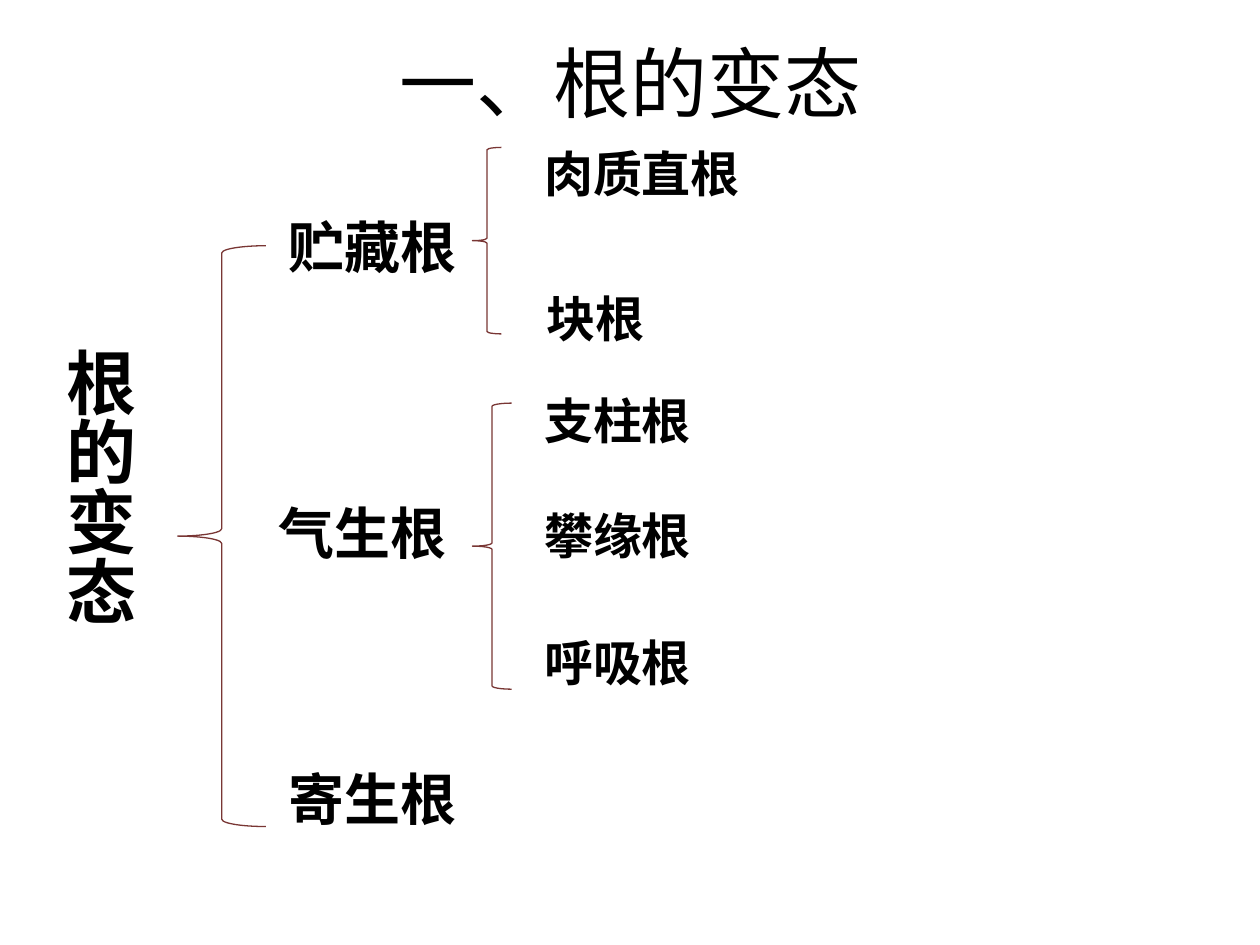
from dataclasses import dataclass

import pptx
import pptx.dml.color
import pptx.enum.shapes
import pptx.enum.text
import pptx.oxml
import pptx.oxml.ns
import pptx.util
from pptx.util import Inches

FONT = "Noto Sans CJK SC"
COLORS = {"text": "000000", "brace": "793634", "background": "FFFFFF"}


@dataclass
class Label:
    text: str
    left: float
    top: float
    width: float
    height: float
    size: int
    vertical: bool = False


@dataclass
class Brace:
    left: float
    top: float
    width: float
    height: float


def color(name: str) -> pptx.dml.color.RGBColor:
    return pptx.dml.color.RGBColor.from_string(COLORS[name])


def format_runs(tf, size: int, bold: bool) -> None:
    for p in tf.paragraphs:
        for r in p.runs:
            r.font.size = pptx.util.Pt(size)
            r.font.bold = bold
            r.font.color.rgb = color("text")
            r.font.name = FONT
            # East Asian characters take their font from a:ea
            ea = pptx.oxml.parse_xml(
                f'<a:ea {pptx.oxml.ns.nsdecls("a")} typeface="{FONT}"/>')
            r.font._element.append(ea)


def draw_label(s, label: Label) -> None:
    box = s.shapes.add_textbox(Inches(label.left), Inches(label.top),
                               Inches(label.width), Inches(label.height))
    tf = box.text_frame
    tf.text = label.text
    tf.word_wrap = False
    tf.auto_size = pptx.enum.text.MSO_AUTO_SIZE.SHAPE_TO_FIT_TEXT
    if label.vertical:
        tf._txBody.bodyPr.set("vert", "eaVert")
    format_runs(tf, label.size, True)


def draw_brace(s, brace: Brace) -> None:
    sp = s.shapes.add_shape(
        pptx.enum.shapes.MSO_SHAPE.LEFT_BRACE, Inches(brace.left),
        Inches(brace.top), Inches(brace.width), Inches(brace.height))
    sp.shadow.inherit = False
    sp.fill.background()
    sp.line.color.rgb = color("brace")
    sp.line.width = pptx.util.Pt(0.75)


ROOT = Label("根的变态", 0.3, 2.66, 0.87, 2.33, 40, vertical=True)
TYPES = [Label(text, left, top, 1.55, 0.64, 32) for text, left, top in (
    ("贮藏根", 2.19, 1.64),
    ("气生根", 2.11, 3.91),
    ("寄生根", 2.19, 6.02),
)]
SUBTYPES = [Label(text, left, top, width, 0.57, 28)
            for text, left, top, width in (
    ("肉质直根", 4.22, 1.09, 1.78),
    ("块根", 4.24, 2.24, 0.99),
    ("支柱根", 4.22, 3.05, 1.39),
    ("攀缘根", 4.22, 3.96, 1.39),
    ("呼吸根", 4.22, 4.97, 1.39),
)]
BRACES = [
    Brace(1.41, 1.95, 0.7, 4.61),
    Brace(3.75, 1.17, 0.23, 1.48),
    Brace(3.75, 3.2, 0.31, 2.27),
]


def main() -> None:
    prs = pptx.Presentation()
    prs.slide_width, prs.slide_height = Inches(10), Inches(7.5)
    s = prs.slides.add_slide(prs.slide_layouts[5])
    s.background.fill.solid()
    s.background.fill.fore_color.rgb = color("background")

    # Title
    title = s.shapes.title
    title.left, title.top = Inches(0.2), Inches(0.21)
    title.width, title.height = Inches(9.61), Inches(0.87)
    tf = title.text_frame
    tf.text = "一、根的变态"
    tf.vertical_anchor = pptx.enum.text.MSO_ANCHOR.MIDDLE
    tf.paragraphs[0].alignment = pptx.enum.text.PP_ALIGN.CENTER
    format_runs(tf, 44, False)

    # Classification tree
    for label in [ROOT, *TYPES, *SUBTYPES]:
        draw_label(s, label)
    for brace in BRACES:
        draw_brace(s, brace)

    prs.save("out.pptx")


if __name__ == "__main__":
    main()
